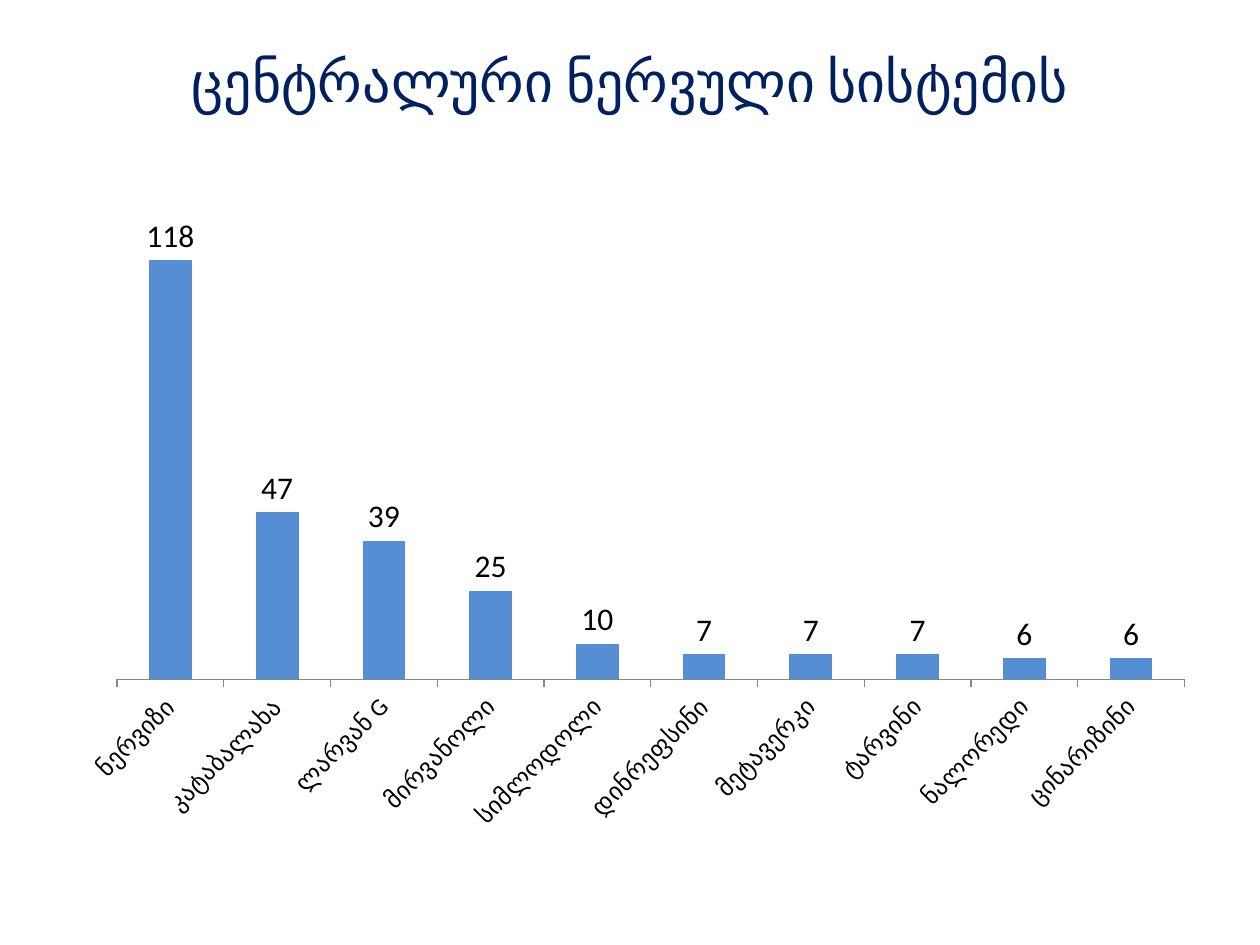
"""Builds a slide with a column chart of nervous system medicines."""
from lxml import etree
from pptx import Presentation
from pptx.chart.data import CategoryChartData
from pptx.dml.color import RGBColor
from pptx.enum.chart import XL_CHART_TYPE as Kind, XL_LABEL_POSITION as Spot, XL_TICK_MARK as Tick
from pptx.enum.text import MSO_ANCHOR as Anchor, PP_ALIGN as Align
from pptx.oxml.ns import qn
from pptx.util import Pt

FONT = "Calibri"
COLORS = {"title": "002060", "bar": "558ED5", "text": "000000", "axis": "868686"}
SALES = [
    ("ნერვიზი", 118),
    ("კატაბალახა", 47),
    ("ლარვან G", 39),
    ("მირვანოლი", 25),
    ("სიმლოდოლი", 10),
    ("დინრეფსინი", 7),
    ("მეტავერკი", 7),
    ("ტარვინი", 7),
    ("ნალორედი", 6),
    ("ცინარიზინი", 6),
]
LEFT, TOP, WIDTH, HEIGHT = 36, 95.8, 653.8, 386.6
PLOT = {
    "x": (66.9 - LEFT) / WIDTH,
    "y": (104 - TOP) / HEIGHT,
    "w": 610 / WIDTH,
    "h": 284.3 / HEIGHT,
}


def style(font, size, color):
    font.name = FONT
    font.size = Pt(size)
    font.color.rgb = RGBColor.from_string(COLORS[color])


deck = Presentation()
deck.slide_width, deck.slide_height = Pt(720), Pt(540)
slide = deck.slides.add_slide(deck.slide_layouts[5])

title = slide.shapes.title
title.left, title.top, title.width, title.height = Pt(36), Pt(0.7), Pt(648), Pt(90)
frame = title.text_frame
frame.vertical_anchor = Anchor.MIDDLE
para = frame.paragraphs[0]
para.alignment = Align.CENTER
run = para.add_run()
run.text = "ცენტრალური ნერვული სისტემის"
style(run.font, 32, "title")

data = CategoryChartData()
data.categories = [name for name, count in SALES]
data.add_series("Series 1", [count for name, count in SALES])
chart = slide.shapes.add_chart(
    Kind.COLUMN_CLUSTERED, Pt(LEFT), Pt(TOP), Pt(WIDTH), Pt(HEIGHT), data
).chart
chart.has_legend = False
chart.has_title = False
style(chart.font, 18, "text")

names = chart.category_axis
names.major_tick_mark = Tick.OUTSIDE
names.format.line.color.rgb = RGBColor.from_string(COLORS["axis"])
names.format.line.width = Pt(0.75)
style(names.tick_labels.font, 14, "text")
names._element.find(qn("c:txPr")).find(qn("a:bodyPr")).set("rot", "-2700000")

scale = chart.value_axis
scale.visible = False
scale.has_major_gridlines = False
scale.minimum_scale, scale.maximum_scale = 0, 140

plot = chart.plots[0]
plot.gap_width = 150
plot.vary_by_categories = False
plot.has_data_labels = True
labels = plot.data_labels
labels.show_value = True
labels.position = Spot.OUTSIDE_END
style(labels.font, 18, "text")
fill = plot.series[0].format.fill
fill.solid()
fill.fore_color.rgb = RGBColor.from_string(COLORS["bar"])

area = chart._chartSpace.chart.plotArea
for old in area.findall(qn("c:layout")):
    area.remove(old)
layout = etree.Element(qn("c:layout"))
area.insert(0, layout)
manual = etree.SubElement(layout, qn("c:manualLayout"))
parts = [("layoutTarget", "inner"), ("xMode", "edge"), ("yMode", "edge"), *PLOT.items()]
for tag, value in parts:
    etree.SubElement(manual, qn(f"c:{tag}")).set("val", str(value))

deck.save("out.pptx")
